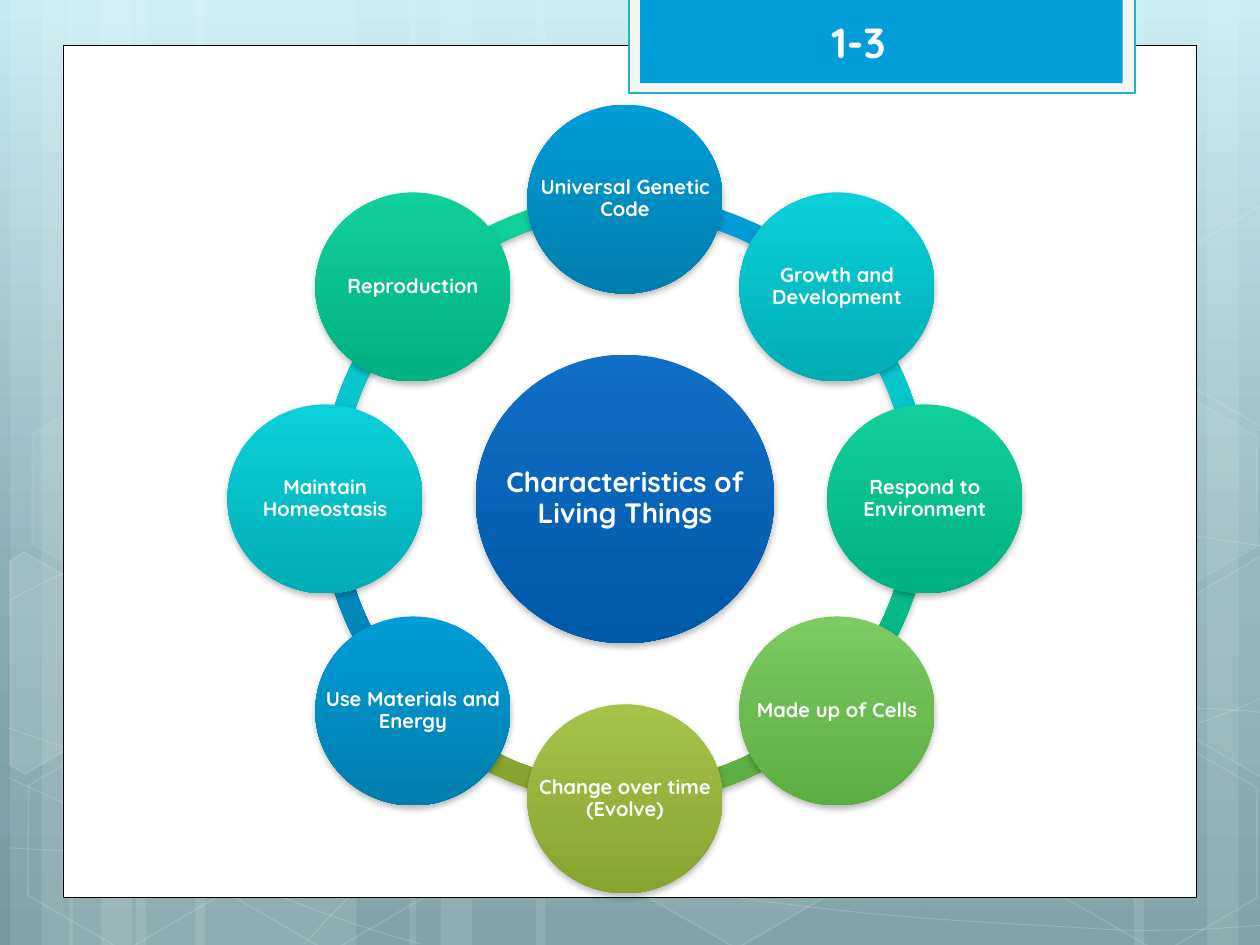
import copy
import math
from typing import NamedTuple, Optional

from lxml import etree
from pptx import Presentation
from pptx import util as u
from pptx.dml.color import RGBColor
from pptx.enum import shapes, text
from pptx.oxml.ns import qn

COLS, ROWS = 10, 7.5
FONT = "Quicksand"
WHITE = "FFFFFF"
TILT = 30
Shape = shapes.MSO_SHAPE

deck = Presentation()
deck.slide_width, deck.slide_height = u.Inches(COLS), u.Inches(ROWS)
page = deck.slides.add_slide(deck.slide_layouts[5])


class Area(NamedTuple):
    """A rectangle in columns and rows of the 10 by 7.5 grid."""
    left: float
    top: float
    width: float
    height: float

    def lengths(self) -> list:
        return [grid(value) for value in self]


class Hexagon(NamedTuple):
    left: float
    top: float
    fill_opacity: int
    line_opacity: int


class Trait(NamedTuple):
    label: str
    light: str
    dark: str


def grid(cells: float) -> int:
    return round(deck.slide_width * cells / COLS)


def colour(value: str) -> RGBColor:
    return RGBColor.from_string(value)


def solid(fill, value: str, opacity: int = 100) -> None:
    """Fill with a colour; no opacity leaves the inside empty."""
    if not opacity:
        fill.background()
        return
    fill.solid()
    fill.fore_color.rgb = colour(value)
    if opacity < 100:
        tint = fill._xPr.find(qn("a:solidFill"))[0]
        etree.SubElement(tint, qn("a:alpha"), val=str(opacity * 1000))


def gradient(fill, *stops: tuple) -> None:
    """Fill from top to bottom with (position, colour) stops."""
    fill.gradient()
    fill.gradient_angle = 270
    first = fill.gradient_stops[0]._gs
    for _ in stops[2:]:
        first.addnext(copy.deepcopy(first))
    for stop, (position, value) in zip(fill.gradient_stops, stops):
        stop.position = position
        stop.color.rgb = colour(value)


def outline(shape, value: Optional[str], width: float = 1, opacity: int = 100) -> None:
    shape.shadow.inherit = False
    if value is None:
        shape.line.fill.background()
        return
    solid(shape.line.fill, value, opacity)
    shape.line.width = u.Pt(width)


def add_shape(kind, area: Area, fill: str, opacity: int = 100):
    shape = page.shapes.add_shape(kind, *area.lengths())
    outline(shape, None)
    solid(shape.fill, fill, opacity)
    return shape


def add_path(points: list, closed: bool, fill_opacity: int):
    corners = [(grid(x), grid(y)) for x, y in points]
    builder = page.shapes.build_freeform(*corners[0], scale=1.0)
    builder.add_line_segments(corners[1:], close=closed)
    shape = builder.convert_to_shape()
    solid(shape.fill, WHITE, fill_opacity)
    return shape


def add_wave(segments: list) -> None:
    """Open line: two numbers are a point, six are a curve's controls and end."""
    shape = add_path([segment[-2:] for segment in segments], False, 0)
    outline(shape, WHITE, 0.5, 20)
    lines = list(shape._element.iter(qn("a:lnTo")))
    for line, segment in zip(lines, segments[1:]):
        if len(segment) == 6:
            line.tag_name = None
            curve = etree.Element(qn("a:cubicBezTo"))
            for x, y in zip(segment[::2], segment[1::2]):
                etree.SubElement(curve, qn("a:pt"), x=str(grid(x) - shape.left),
                                 y=str(grid(y) - shape.top))
            line.getparent().replace(line, curve)


def add_cut_hexagon(points: list, centre: tuple, fill_opacity: int) -> None:
    """Outline laid upright about its centre, then tilted like the whole hexagons."""
    cos, sin = math.cos(math.radians(TILT)), math.sin(math.radians(TILT))
    offsets = [(x - centre[0], y - centre[1]) for x, y in points]
    upright = [(centre[0] + x * cos + y * sin, centre[1] + y * cos - x * sin) for x, y in offsets]
    shape = add_path(upright, True, fill_opacity)
    shape.rotation = TILT
    outline(shape, WHITE, 1, 12)


def shade(shape, light: str, dark: str) -> None:
    """Gradient fill with a soft shadow below."""
    gradient(shape.fill, (0, light), (1, dark))
    effects = shape._element.spPr.find(qn("a:effectLst"))
    shadow = etree.SubElement(effects, qn("a:outerShdw"), blurRad=str(u.Pt(4)),
                              dist=str(u.Pt(2)), dir="5400000", rotWithShape="0")
    black = etree.SubElement(shadow, qn("a:srgbClr"), val="000000")
    etree.SubElement(black, qn("a:alpha"), val="28000")


def style(para, size: float, align) -> None:
    para.alignment = align
    para.font.name, para.font.size, para.font.bold = FONT, u.Pt(size), True
    para.font.color.rgb = colour(WHITE)


def add_bubble(trait: Trait, x: float, y: float, width: float, height: float, size: float) -> None:
    area = Area(x - width / 2, y - height / 2, width, height)
    shade(add_shape(Shape.OVAL, area, WHITE), trait.light, trait.dark)
    frame = page.shapes.add_textbox(*area.lengths()).text_frame
    frame.word_wrap = True
    frame.vertical_anchor = text.MSO_ANCHOR.MIDDLE
    frame.margin_left = frame.margin_right = frame.margin_top = frame.margin_bottom = grid(0.02)
    para = frame.paragraphs[0]
    para.text = trait.label
    para.line_spacing = 0.9
    style(para, size, text.PP_ALIGN.CENTER)


# Background with translucent strips
gradient(page.background.fill, (0, "C4EBF1"), (0.62, "88ADB3"), (1, "749AA0"))
for start, broad, mirrored in ((0.08, 1.75, False), (0.55, 1.75, False),
                               (-0.08, 1.75, True), (3.25, 3.08, False)):
    for offset, width in ((1, broad), (0, 0.5), (0.25, 0.83)):
        left = start + offset
        strip = Area(COLS - left - width if mirrored else left, 0, width, ROWS)
        add_shape(Shape.RECTANGLE, strip, WHITE, 10).rotation = 180 if mirrored else 0

# Fine waves
WAVES = [
    [(0.07, 6.73), (0.61, 6.76, 1.15, 6.79, 1.9, 6.78), (2.65, 6.77, 3.58, 6.75, 4.58, 6.65),
     (5.58, 6.55, 7, 6.36, 7.92, 6.17), (8.83, 5.98, 9.77, 5.68, 10.07, 5.51)],
    [(0.07, 4.77), (0.36, 4.61, 0.65, 4.46, 1.21, 4.31), (1.78, 4.16, 2.59, 3.94, 3.47, 3.87),
     (4.36, 3.8, 5.44, 3.79, 6.54, 3.87), (7.64, 3.95, 9.47, 4.26, 10.07, 4.34)],
    [(0.06, 6.17), (1.27, 6.72, 2.47, 7.27, 3.34, 7.49)],
    [(0.07, 5.78), (0.38, 5.89, 0.7, 6, 1.28, 6.16), (1.86, 6.31, 2.73, 6.56, 3.57, 6.73),
     (4.4, 6.9, 5.45, 7.08, 6.28, 7.18), (7.11, 7.29, 8, 7.33, 8.53, 7.36),
     (9.05, 7.4, 9.19, 7.38, 9.45, 7.38), (9.71, 7.37, 9.89, 7.35, 10.07, 7.34)],
    [(2.42, 7.49), (2.6, 7.29, 2.78, 7.09, 3.02, 6.91), (3.26, 6.73, 3.6, 6.53, 3.88, 6.39),
     (4.16, 6.25, 4.33, 6.19, 4.7, 6.09), (5.06, 5.99, 5.73, 5.85, 6.08, 5.78),
     (6.44, 5.71, 6.49, 5.71, 6.8, 5.69), (7.11, 5.66, 7.6, 5.63, 7.94, 5.62),
     (8.29, 5.61, 8.86, 5.62, 8.86, 5.62), (9.53, 5.62),
     (9.71, 5.63, 9.88, 5.64, 9.97, 5.65), (10.06, 5.66, 10.03, 5.65, 10.06, 5.66)],
]
for wave in WAVES:
    add_wave(wave)

# Whole hexagons, then those cut by the slide edge
for item in (Hexagon(3.34, 0.36, 4, 8), Hexagon(4.97, 5.89, 6, 12), Hexagon(0.11, 5.91, 0, 12),
             Hexagon(0.14, 3.12, 7, 8), Hexagon(1.74, 5.92, 0, 12), Hexagon(7.53, 4.53, 10, 12),
             Hexagon(8.34, 5.93, 0, 12), Hexagon(8.34, 3.14, 7, 8)):
    cell = add_shape(Shape.HEXAGON, Area(item.left, item.top, 1.75, 1.52), WHITE, item.fill_opacity)
    cell.adjustments[0], cell.adjustments[1] = 0.285, 1.155
    cell.rotation = TILT
    outline(cell, WHITE, 1, item.line_opacity)
add_cut_hexagon([(0.08, 4.45), (0.19, 4.38), (0.96, 4.82), (0.95, 5.7), (0.2, 6.14), (0.08, 6.07)],
                (0.36, 5.35), 10)
for top, opacity in ((4.41, 4), (1.63, 0)):
    add_cut_hexagon([(x, top + drop) for x, drop in ((9.26, 0.44), (10.01, 0), (10.09, 0.05),
                                                     (10.09, 1.72), (10.02, 1.76), (9.26, 1.32))],
                    (9.85, top + 0.79), opacity)

# White panel and title tab
outline(add_shape(Shape.RECTANGLE, Area(0.5, 0.36, 9, 6.76), WHITE), "000000", 0.5)
outline(add_shape(Shape.RECTANGLE, Area(4.99, -0.02, 4.02, 0.76), "F5F5F5"), "21B2C9", 1.25)
add_shape(Shape.RECTANGLE, Area(5.08, -0.02, 3.83, 0.68), "009DD9")
title = page.shapes.title
title.left, title.top, title.width, title.height = Area(6.5, 0.08, 1.08, 0.5).lengths()
title.text_frame.text = "1-3"
title.text_frame.auto_size = text.MSO_AUTO_SIZE.NONE
title.text_frame.vertical_anchor = text.MSO_ANCHOR.TOP
style(title.text_frame.paragraphs[0], 24, text.PP_ALIGN.LEFT)
title._element.getparent().append(title._element)  # in front of the tab

# Ring of traits, clockwise from the top
BLUE, CYAN, GREEN = ("009DD9", "007DAC"), ("0BD0D9", "00ADB5"), ("10CF9B", "00B181")
TRAITS = [Trait("Universal Genetic Code", *BLUE), Trait("Growth and Development", *CYAN),
          Trait("Respond to Environment", *GREEN), Trait("Made up of Cells", "7CCA62", "5CAD42"),
          Trait("Change over time (Evolve)", "A5C249", "88A430"),
          Trait("Use Materials and Energy", *BLUE), Trait("Maintain Homeostasis", *CYAN),
          Trait("Reproduction", *GREEN)]
X, Y, RADIUS, RING = 4.96, 3.96, 2.38, 4.84
STEP = 360 / len(TRAITS)
ANGLES = [(270 + i * STEP) % 360 for i in range(len(TRAITS))]

for trait, angle in reversed(list(zip(TRAITS, ANGLES))):
    arc = add_shape(Shape.BLOCK_ARC, Area(X - RING / 2, Y - RING / 2, RING, RING), WHITE)
    for i, value in enumerate((angle * 0.6, (angle + STEP) % 360 * 0.6, 0.034)):
        arc.adjustments[i] = value
    shade(arc, trait.light, trait.dark)

add_bubble(Trait("Characteristics of Living Things", "0F6FC6", "0059A9"), X, Y, 2.37, 2.29, 16)
for trait, angle in zip(TRAITS, map(math.radians, ANGLES)):
    add_bubble(trait, X + RADIUS * math.cos(angle), Y + RADIUS * math.sin(angle), 1.55, 1.5, 11.5)

deck.save("out.pptx")
